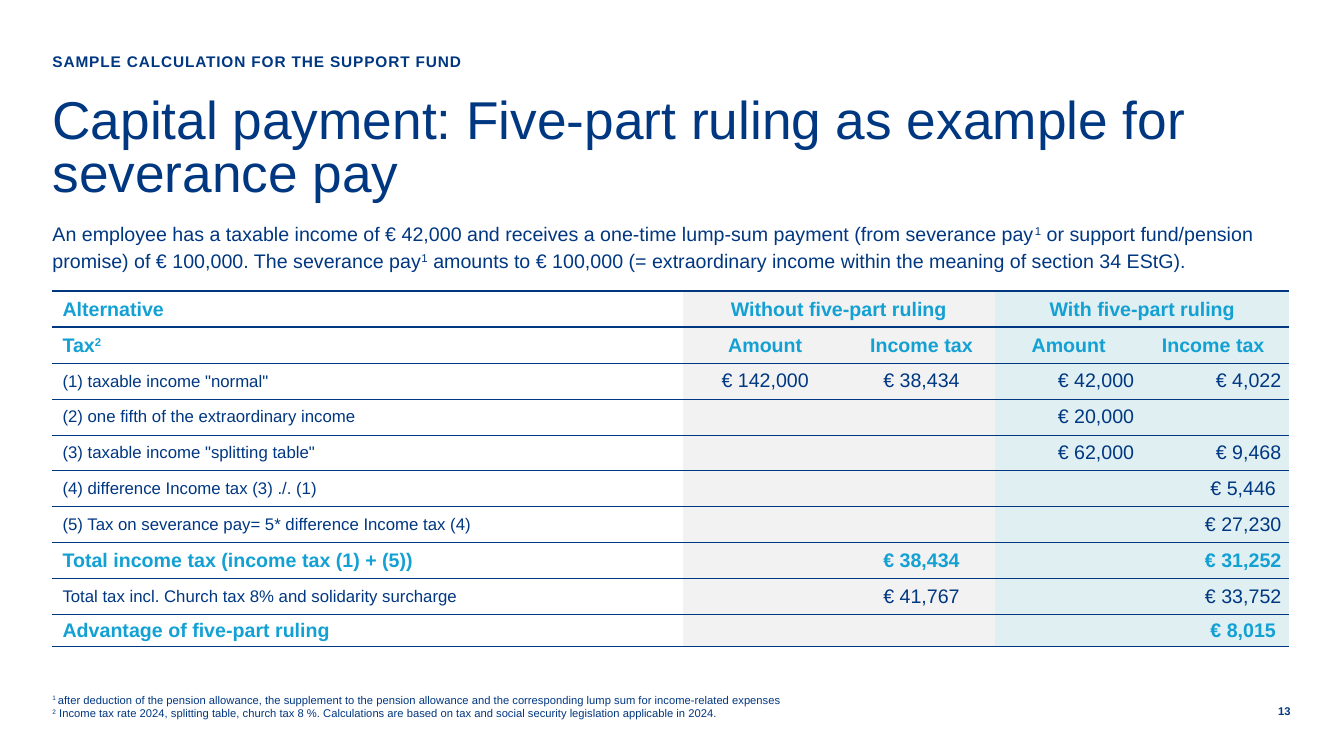
from lxml import etree
from pptx import Presentation
from pptx.dml.color import RGBColor
from pptx.enum.text import MSO_ANCHOR, MSO_AUTO_SIZE, PP_ALIGN
from pptx.oxml.ns import qn
from pptx.util import Inches, Pt

LEFT, CENTER, RIGHT = PP_ALIGN.LEFT, PP_ALIGN.CENTER, PP_ALIGN.RIGHT
TOP, MIDDLE, BOTTOM = MSO_ANCHOR.TOP, MSO_ANCHOR.MIDDLE, MSO_ANCHOR.BOTTOM
NO_AUTOFIT = MSO_AUTO_SIZE.NONE
NAVY, CYAN, GREY, ICE = "003781", "13A0D3", "F2F2F2", "DFEFF2"
FONT = "Arial"
NO_GRID_STYLE = "{2D5ABB26-0587-4C30-8999-92F81FD0307C}"

# Carets enclose superscripts.
KICKER = "SAMPLE CALCULATION FOR THE SUPPORT FUND"
TITLE = "Capital payment: Five-part ruling as example for severance pay"
INTRO = (
    "An employee has a taxable income of € 42,000 and receives a one-time lump-sum payment "
    "(from severance pay^1^ or support fund/pension promise) of € 100,000. The severance pay^1^ "
    "amounts to € 100,000 (= extraordinary income within the meaning of section 34 EStG)."
)
FOOTNOTES = [
    "^1 ^after deduction of the pension allowance, the supplement to the pension allowance "
    "and the corresponding lump sum for income-related expenses ",
    "^2^ Income tax rate 2024, splitting table, church tax 8 %. Calculations are based on "
    "tax and social security legislation applicable in 2024.",
]
PAGE_NUMBER = "13"
TAX_ROWS = [
    ("Alternative", "Without five-part ruling", "", "With five-part ruling", ""),
    ("Tax^2^", "Amount", "Income tax", "Amount", "Income tax "),
    ('(1) taxable income "normal"', "€ 142,000", "€ 38,434", "€ 42,000", "€ 4,022"),
    ("(2) one fifth of the extraordinary income", "", "", "€ 20,000", ""),
    ('(3) taxable income "splitting table"', "", "", "€ 62,000", "€ 9,468"),
    ("(4) difference Income tax (3) ./. (1)", "", "", "", "€ 5,446 "),
    ("(5) Tax on severance pay= 5* difference Income tax (4)", "", "", "", "€ 27,230"),
    ("Total income tax (income tax (1) + (5))", "", "€ 38,434", "", "€ 31,252"),
    ("Total tax incl. Church tax 8% and solidarity surcharge", "", "€ 41,767", "", "€ 33,752"),
    ("Advantage of five-part ruling", "", "", "", "€ 8,015 "),
]
HEADER_ROWS = 2
EMPHASIZED_ROWS = {0, 1, 7, 9}
COLUMN_WIDTHS = [6.25, 1.64, 1.46, 1.46, 1.46]
COLUMN_FILLS = [None, GREY, GREY, ICE, ICE]
COLUMN_ALIGNMENTS = [LEFT, CENTER, CENTER, RIGHT, RIGHT]

MARGIN = 0.52
TABLE_TOP = 2.89
ROW_HEIGHT = 3.21 / 9
LAST_ROW_HEIGHT = 0.32


def color(hex_string):
    return RGBColor.from_string(hex_string)


def write(paragraph, text, size, hex_color=NAVY, bold=False, alignment=LEFT, line_points=None):
    """Fill a paragraph, raising the parts enclosed in carets."""
    paragraph.alignment = alignment
    paragraph.space_before = Pt(0)
    if line_points:
        paragraph.line_spacing = Pt(line_points)
    for index, part in enumerate(text.split("^")):
        if not part:
            continue
        run = paragraph.add_run()
        run.text = part
        run.font.name = FONT
        run.font.size = Pt(size)
        run.font.bold = bold
        run.font.color.rgb = color(hex_color)
        if index % 2:
            run.font._element.set("baseline", "30000")


def prepare_frame(shape, box, anchor=TOP):
    """Place a text shape and strip its insets."""
    shape.left, shape.top, shape.width, shape.height = map(Inches, box)
    frame = shape.text_frame
    frame.margin_left = frame.margin_right = frame.margin_top = frame.margin_bottom = 0
    frame.word_wrap = True
    frame.auto_size = NO_AUTOFIT
    frame.vertical_anchor = anchor
    return frame


def add_text(slide, box, anchor=TOP):
    return prepare_frame(slide.shapes.add_textbox(0, 0, 0, 0), box, anchor)


def add_border(cell, tag, points):
    properties = cell._tc.get_or_add_tcPr()
    line = etree.SubElement(properties, qn(tag), w=str(Pt(points)))
    fill = etree.SubElement(line, qn("a:solidFill"))
    etree.SubElement(fill, qn("a:srgbClr"), val=NAVY)


def format_cell(cell, row, column, text):
    is_header = row < HEADER_ROWS
    emphasized = row in EMPHASIZED_ROWS
    is_label = column == 0
    side, edge = (0.1, 0.05) if is_label or is_header else (0.08, 0.04)
    cell.margin_left = cell.margin_right = Inches(side)
    cell.margin_top = cell.margin_bottom = Inches(edge)
    cell.vertical_anchor = MIDDLE
    add_border(cell, "a:lnT", 1.5 if row < HEADER_ROWS else 0.75)
    add_border(cell, "a:lnB", 1.5 if row == 0 else 0.75)
    if COLUMN_FILLS[column]:
        cell.fill.solid()
        cell.fill.fore_color.rgb = color(COLUMN_FILLS[column])
    else:
        cell.fill.background()
    size = 12 if is_label and not emphasized else 14
    alignment = CENTER if is_header and not is_label else COLUMN_ALIGNMENTS[column]
    paragraph = cell.text_frame.paragraphs[0]
    write(paragraph, text, size, CYAN if emphasized else NAVY, emphasized, alignment)
    if not text:
        etree.SubElement(paragraph._p, qn("a:endParaRPr"), sz="1200")


def add_tax_table(slide):
    heights = [ROW_HEIGHT] * (len(TAX_ROWS) - 1) + [LAST_ROW_HEIGHT]
    table = slide.shapes.add_table(
        len(heights), len(COLUMN_WIDTHS), Inches(MARGIN), Inches(TABLE_TOP),
        Inches(sum(COLUMN_WIDTHS)), Inches(sum(heights)),
    ).table
    table.first_row = table.horz_banding = False
    table._tbl.tblPr.find(qn("a:tableStyleId")).text = NO_GRID_STYLE
    for column, width in zip(table.columns, COLUMN_WIDTHS):
        column.width = Inches(width)
    for row, height in zip(table.rows, heights):
        row.height = Inches(height)
    for row, texts in enumerate(TAX_ROWS):
        for column, text in enumerate(texts):
            format_cell(table.cell(row, column), row, column, text)
    for first in (1, 3):
        table.cell(0, first).merge(table.cell(0, first + 1))


def main():
    presentation = Presentation()
    presentation.slide_width, presentation.slide_height = Inches(13.33), Inches(7.5)
    slide = presentation.slides.add_slide(presentation.slide_layouts[1])

    title = prepare_frame(slide.shapes.title, (MARGIN, 0.96, 12.36, 1.02))
    write(title.paragraphs[0], TITLE, 38, line_points=38)

    kicker = prepare_frame(slide.placeholders[1], (MARGIN, 0.52, 10.2, 0.28)).paragraphs[0]
    properties = kicker._p.get_or_add_pPr()
    properties.set("marL", "0")
    properties.set("indent", "0")
    etree.SubElement(properties, qn("a:buNone"))
    write(kicker, KICKER, 11, bold=True)
    kicker.runs[0].font._element.set("spc", "60")

    intro = add_text(slide, (MARGIN, 2.17, 12.29, 0.53))
    write(intro.paragraphs[0], INTRO, 14, line_points=19.2)

    add_tax_table(slide)

    footnotes = add_text(slide, (MARGIN, 6.86, 8.9, 0.28), BOTTOM)
    for index, note in enumerate(FOOTNOTES):
        write(footnotes.add_paragraph() if index else footnotes.paragraphs[0], note, 8)

    page = add_text(slide, (12.51, 6.97, 0.29, 0.16), MIDDLE)
    write(page.paragraphs[0], PAGE_NUMBER, 8, bold=True, alignment=RIGHT, line_points=10)

    presentation.save("out.pptx")


if __name__ == "__main__":
    main()
